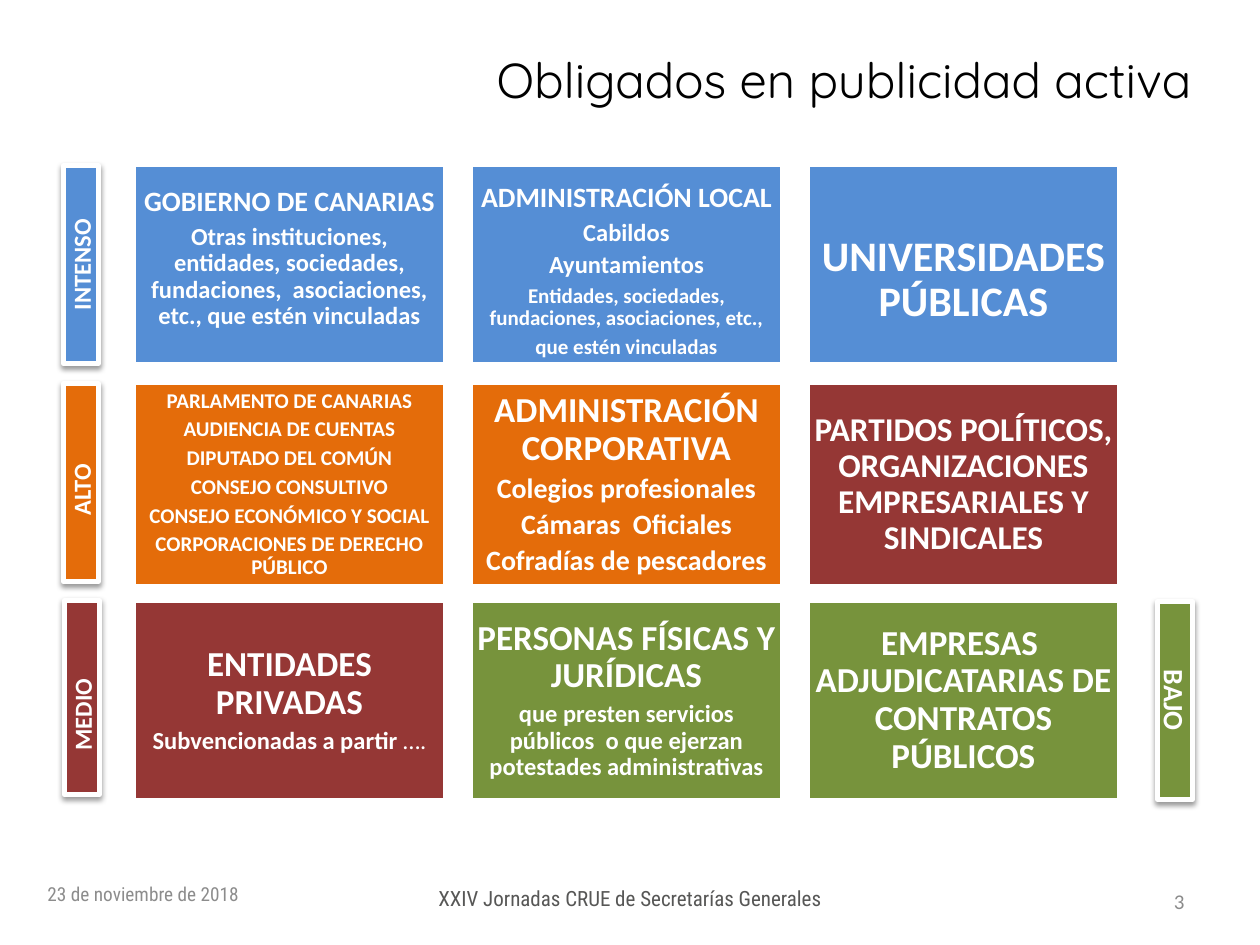
from lxml.etree import SubElement
from pptx import Presentation
from pptx.dml.color import RGBColor
from pptx.enum.shapes import MSO_SHAPE
from pptx.enum.text import MSO_ANCHOR, MSO_AUTO_SIZE, PP_ALIGN
from pptx.oxml.ns import qn
from pptx.util import Emu, Pt

BLUE, ORANGE, RED, GREEN = "558ED5", "E46C0A", "953735", "77933C"


def px(*values):
    return [Emu(round(v * 914400 / 126)) for v in values]


def style(p, size, color, name="Calibri", bold=False, align=PP_ALIGN.CENTER):
    p.alignment = align
    p.font.size = Pt(size)
    p.font.name = name
    p.font.bold = bold
    p.font.color.rgb = RGBColor.from_string(color)


prs = Presentation()
prs.slide_width, prs.slide_height = px(1260, 945)
s = prs.slides.add_slide(prs.slide_layouts[5])

title = s.shapes.title
title.left, title.top, title.width, title.height = px(428, 0, 832, 158)
tf = title.text_frame
tf.auto_size = MSO_AUTO_SIZE.NONE
tf.vertical_anchor = MSO_ANCHOR.MIDDLE
tf.text = "Obligados en publicidad activa"
style(tf.paragraphs[0], 28, "000000", "Quicksand")

boxes = [
    (0, 0, BLUE, 0, 11, [
        ("GOBIERNO DE CANARIAS", 16),
        ("Otras instituciones, entidades, sociedades, fundaciones,  asociaciones, "
         "etc., que estén vinculadas", 14)]),
    (0, 1, BLUE, 14, 0, [
        ("ADMINISTRACIÓN LOCAL", 16),
        ("Cabildos", 14),
        ("Ayuntamientos", 14),
        ("Entidades, sociedades, fundaciones, asociaciones, etc.,", 12),
        ("que estén vinculadas", 12)]),
    (0, 2, BLUE, 32, 0, [("UNIVERSIDADES PÚBLICAS", 24)]),
    (1, 0, ORANGE, 0, 0, [
        ("PARLAMENTO DE CANARIAS", 12),
        ("AUDIENCIA DE CUENTAS", 12),
        ("DIPUTADO DEL COMÚN", 12),
        ("CONSEJO CONSULTIVO", 12),
        ("CONSEJO ECONÓMICO Y SOCIAL", 12),
        ("CORPORACIONES DE DERECHO PÚBLICO", 12)]),
    (1, 1, ORANGE, 0, 0, [
        ("ADMINISTRACIÓN CORPORATIVA", 20),
        ("Colegios profesionales", 16),
        ("Cámaras  Oficiales", 16),
        ("Cofradías de pescadores", 16)]),
    (1, 2, RED, 0, 0, [
        ("PARTIDOS POLÍTICOS, ORGANIZACIONES EMPRESARIALES Y SINDICALES", 19)]),
    (2, 0, RED, 0, 0, [
        ("ENTIDADES PRIVADAS", 20),
        ("Subvencionadas a partir ", 14)]),
    (2, 1, GREEN, 0, 0, [
        ("PERSONAS FÍSICAS Y JURÍDICAS", 20),
        ("que presten servicios públicos  o que ejerzan potestades administrativas", 14)]),
    (2, 2, GREEN, 0, 0, [
        ("EMPRESAS  ADJUDICATARIAS DE CONTRATOS PÚBLICOS", 20)]),
]
heights = [199, 203, 199]
for row, col, color, above, below, lines in boxes:
    sp = s.shapes.add_shape(MSO_SHAPE.RECTANGLE,
                            *px(134 + 337 * col, 165 + 218 * row, 311, heights[row]))
    sp.shadow.inherit = False
    sp.fill.solid()
    sp.fill.fore_color.rgb = RGBColor.from_string(color)
    sp.line.color.rgb = RGBColor.from_string("FFFFFF")
    sp.line.width = Pt(2)
    tf = sp.text_frame
    tf.word_wrap = True
    tf.vertical_anchor = MSO_ANCHOR.MIDDLE
    tf.margin_left, tf.margin_right = px(5, 5)
    tf.margin_top, tf.margin_bottom = px(5 + above, 5 + below)
    for i, (text, size) in enumerate(lines):
        p = tf.paragraphs[0] if i == 0 else tf.add_paragraph()
        p.line_spacing = 0.9
        p.space_after = Pt(3.5)
        style(p, size, "FFFFFF", bold=True)
        p.add_run().text = text
        if text.startswith("Subvencionadas"):
            r = p.add_run()
            r.text = "…."
            r.font.bold = False

tabs = [
    ("INTENSO", BLUE, -18, 247, 198, 270, 14, 0),
    ("ALTO", ORANGE, -18, 465, 198, 270, 14, 14),
    ("MEDIO", RED, -15, 680, 194, 270, 14, 34),
    ("BAJO", GREEN, 1076, 683, 198, 90, 16, 0),
]
for text, color, x, y, w, angle, size, indent in tabs:
    sp = s.shapes.add_shape(MSO_SHAPE.RECTANGLE, *px(x, y, w, 35))
    sp.rotation = angle
    sp.fill.solid()
    sp.fill.fore_color.rgb = RGBColor.from_string(color)
    sp.line.color.rgb = RGBColor.from_string("FFFFFF")
    sp.line.width = Pt(3)
    sp.shadow.inherit = False
    effects = sp._element.spPr.find(qn("a:effectLst"))
    shadow = SubElement(effects, qn("a:outerShdw"), blurRad=str(Pt(3.1)),
                        dist=str(Pt(1.6)), dir="5400000", rotWithShape="0")
    black = SubElement(shadow, qn("a:srgbClr"), val="000000")
    SubElement(black, qn("a:alpha"), val="38000")
    tf = sp.text_frame
    tf.word_wrap = True
    tf.vertical_anchor = MSO_ANCHOR.MIDDLE
    tf.margin_right, = px(13 + indent)
    tf.text = text
    style(tf.paragraphs[0], size, "FFFFFF", bold=True)

footers = [
    ("23 de noviembre de 2018", 35, 869, 294, 50, 11, "8C8C8C", "Roboto Condensed",
     PP_ALIGN.LEFT, MSO_ANCHOR.MIDDLE),
    ("XXIV Jornadas CRUE de Secretarías Generales", 382, 879, 496, 39, 12, "575756",
     "Roboto Condensed", PP_ALIGN.CENTER, MSO_ANCHOR.TOP),
    ("3", 1126, 876, 71, 50, 12, "8B8B8B", "Calibri", PP_ALIGN.RIGHT, MSO_ANCHOR.MIDDLE),
]
for text, x, y, w, h, size, color, name, align, anchor in footers:
    tf = s.shapes.add_textbox(*px(x, y, w, h)).text_frame
    tf.word_wrap = True
    tf.vertical_anchor = anchor
    tf.text = text
    style(tf.paragraphs[0], size, color, name, align=align)

prs.save("out.pptx")
